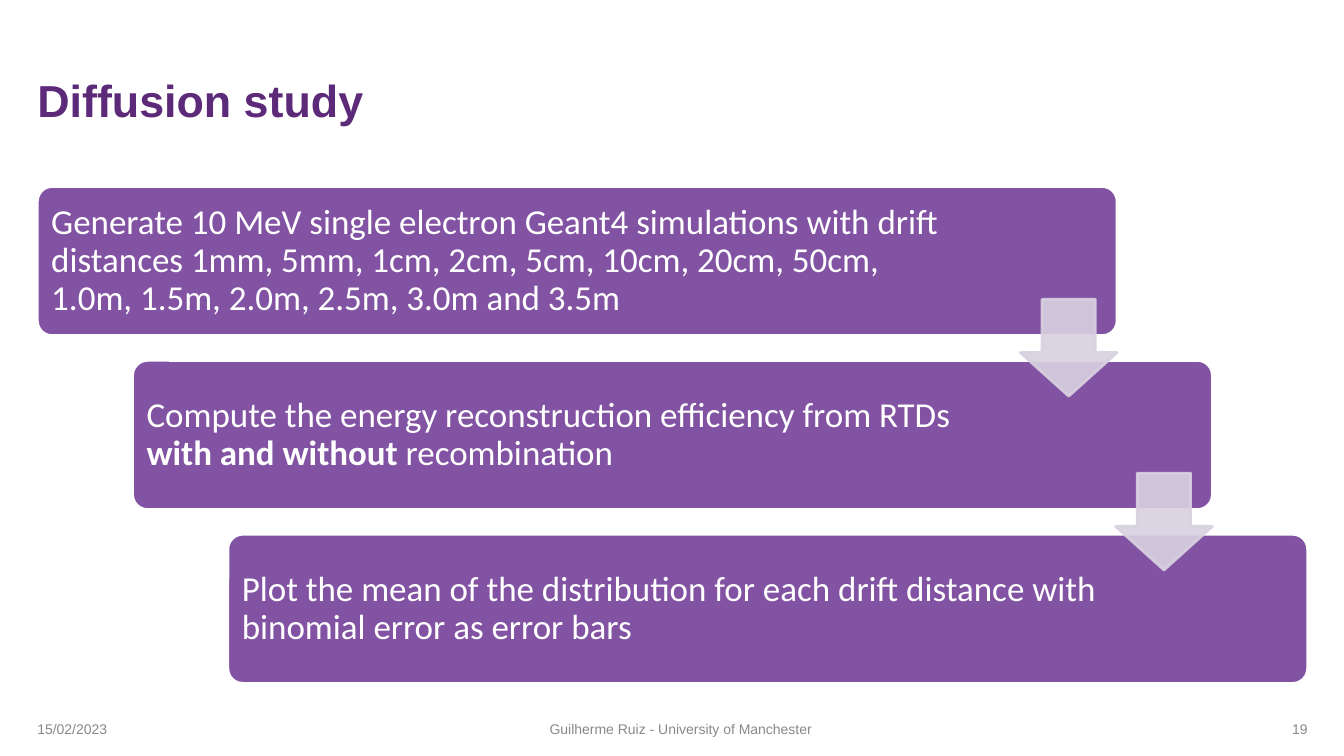
from lxml import etree
from pptx import Presentation
from pptx.dml.color import RGBColor
from pptx.enum import shapes, text
from pptx.oxml import ns
from pptx.util import Inches, Pt

PURPLE = "8253A3"
LILAC = "D8D1E0"
WHITE = "FFFFFF"
GREY = "898989"
TITLE_PURPLE = "5D2979"

LEFT, TOP = 0.37, 1.85
STEP_X, STEP_Y = 0.945, 1.725
BOX_WIDTH, BOX_HEIGHT = 10.71, 1.48
TEXT_INSET = 0.04
ARROW_LEFT, ARROW_TOP, ARROW_SIZE = 10.12, 2.97, 0.96

STEPS = [
    (9.12, [("Generate 10 MeV single electron Geant4 simulations with drift "
             "distances 1mm, 5mm, 1cm, 2cm, 5cm, 10cm, 20cm, 50cm, "
             "1.0m, 1.5m, 2.0m, 2.5m, 3.0m and 3.5m", False)]),
    (8.72, [("Compute the energy reconstruction efficiency from RTDs ", False),
            ("with and without", True),
            (" recombination", False)]),
    (8.72, [("Plot the mean of the distribution for each drift distance with "
             "binomial error as error bars", False)]),
]


def colour(value):
    return RGBColor.from_string(value)


def set_font(font, name, size, value, bold=False):
    font.name = name
    font.size = Pt(size)
    font.bold = bold
    font.color.rgb = colour(value)


def set_frame(frame, margin):
    frame.word_wrap = True
    frame.auto_size = text.MSO_AUTO_SIZE.NONE
    frame.vertical_anchor = text.MSO_ANCHOR.MIDDLE
    frame.margin_left = frame.margin_right = Inches(margin)
    frame.margin_top = frame.margin_bottom = Inches(margin)


def add_filled_shape(slide, kind, box, adjustments, fill, line):
    shape = slide.shapes.add_shape(kind, *map(Inches, box))
    shape.shadow.inherit = False
    for index, value in enumerate(adjustments):
        shape.adjustments[index] = value
    shape.fill.solid()
    shape.fill.fore_color.rgb = colour(fill)
    shape.line.color.rgb = colour(line)
    shape.line.width = Pt(2)
    return shape


def add_text(slide, box, margin=0):
    frame = slide.shapes.add_textbox(*map(Inches, box)).text_frame
    set_frame(frame, margin)
    return frame.paragraphs[0]


def add_step(slide, index, text_width, runs):
    left, top = LEFT + index * STEP_X, TOP + index * STEP_Y
    add_filled_shape(slide, shapes.MSO_SHAPE.ROUNDED_RECTANGLE,
                     (left, top, BOX_WIDTH, BOX_HEIGHT), [0.1], PURPLE, WHITE)
    paragraph = add_text(slide, (left + TEXT_INSET, top + TEXT_INSET, text_width,
                                 BOX_HEIGHT - 2 * TEXT_INSET), 0.1)
    paragraph.line_spacing = 0.9
    set_font(paragraph.font, "Calibri", 25, WHITE)
    for words, bold in runs:
        run = paragraph.add_run()
        run.text = words
        set_font(run.font, "Calibri", 25, WHITE, bold)


def add_arrow(slide, index):
    box = (ARROW_LEFT + index * STEP_X, ARROW_TOP + index * STEP_Y,
           ARROW_SIZE, ARROW_SIZE)
    arrow = add_filled_shape(slide, shapes.MSO_SHAPE.DOWN_ARROW, box,
                             [0.55, 0.45], LILAC, LILAC)
    properties = arrow.element.spPr
    for colour_element in properties.iter(ns.qn("a:srgbClr")):
        etree.SubElement(colour_element, ns.qn("a:alpha"), val="90000")


def add_footer(slide, left, width, words, alignment):
    paragraph = add_text(slide, (left, 7.03, width, 0.4))
    paragraph.text = words
    paragraph.alignment = alignment
    set_font(paragraph.font, "Arial", 10, GREY)


def set_title(slide, words):
    title = slide.shapes.title
    title.left, title.top, title.width, title.height = map(
        Inches, (LEFT, 0.36, 12.6, 1.25))
    set_frame(title.text_frame, 0)
    paragraph = title.text_frame.paragraphs[0]
    paragraph.text = words
    paragraph.alignment = text.PP_ALIGN.LEFT
    set_font(paragraph.font, "Arial", 32, TITLE_PURPLE, True)


def main():
    presentation = Presentation()
    presentation.slide_width = Inches(13.33)
    presentation.slide_height = Inches(7.5)
    slide = presentation.slides.add_slide(presentation.slide_layouts[5])

    set_title(slide, "Diffusion study")
    for index, (text_width, runs) in enumerate(STEPS):
        add_step(slide, index, text_width, runs)
    for index in range(len(STEPS) - 1):
        add_arrow(slide, index)

    add_footer(slide, LEFT, 3.51, "15/02/2023", text.PP_ALIGN.LEFT)
    add_footer(slide, 4.64, 4.22, "Guilherme Ruiz - University of Manchester",
               text.PP_ALIGN.CENTER)
    add_footer(slide, 9.86, 3.11, "19", text.PP_ALIGN.RIGHT)
    presentation.save("out.pptx")


if __name__ == "__main__":
    main()
